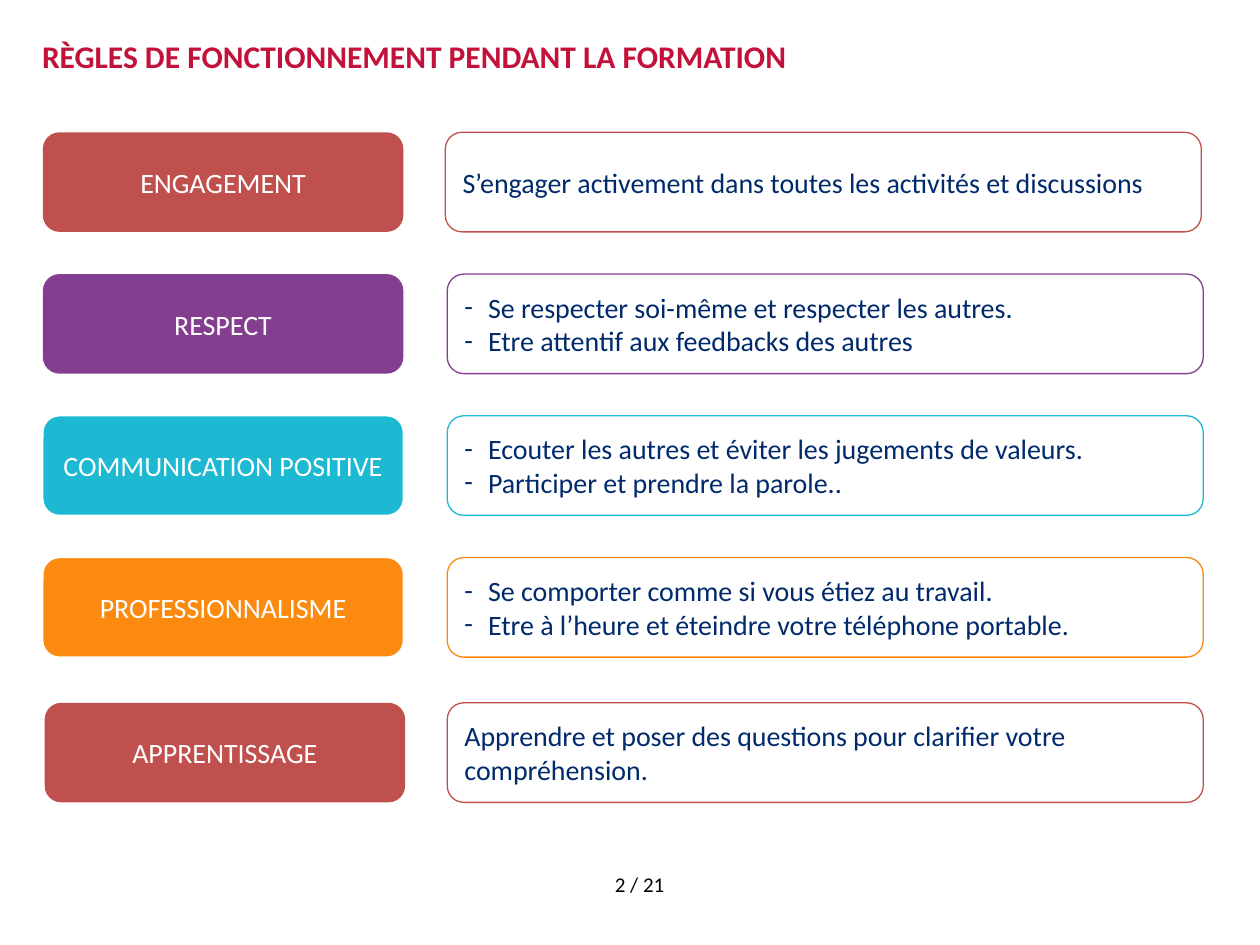
from dataclasses import dataclass
from typing import Optional

from lxml import etree
from pptx import Presentation
from pptx.dml.color import RGBColor
from pptx.enum import shapes, text
from pptx.oxml import ns
from pptx.util import Pt

FONT = "Calibri"
WHITE, NAVY, CRIMSON, BLACK = "FFFFFF", "002A6C", "C2113A", "000000"
RED, PURPLE, TURQUOISE, ORANGE = "C0504D", "833E90", "1DB8D1", "FC8A0E"
CARD_HEIGHT, LABEL_WIDTH, DETAIL_WIDTH = 56.9, 206, 432
HANGING = 13.5


@dataclass
class Rule:
    label: str
    details: list[str]
    colour: str
    top: float
    label_left: float = 24.5
    detail_left: float = 255.6
    label_outline: Optional[str] = None


RULES = [
    Rule("ENGAGEMENT",
         ["S’engager activement dans toutes les activités et discussions"],
         RED, 75.6, detail_left=254.5),
    Rule("RESPECT",
         ["Se respecter soi-même et respecter les autres.",
          "Etre attentif aux feedbacks des autres"],
         PURPLE, 156.6),
    Rule("COMMUNICATION POSITIVE",
         ["Ecouter les autres et éviter les jugements de valeurs.",
          "Participer et prendre la parole.."],
         TURQUOISE, 237.6, label_outline=WHITE),
    Rule("PROFESSIONNALISME",
         ["Se comporter comme si vous étiez au travail.",
          "Etre à l’heure et éteindre votre téléphone portable."],
         ORANGE, 318.6, label_outline=WHITE),
    Rule("APPRENTISSAGE",
         ["Apprendre et poser des questions pour clarifier votre compréhension."],
         RED, 401.6, label_left=25.5),
]


def rgb(colour: str) -> RGBColor:
    return RGBColor.from_string(colour)


def add_dash(paragraph) -> None:
    """Give the paragraph a hanging dash bullet in the text colour."""
    properties = paragraph._p.get_or_add_pPr()
    properties.set("marL", str(Pt(HANGING)))
    properties.set("indent", str(-Pt(HANGING)))
    bullet_colour = etree.SubElement(properties, ns.qn("a:buClr"))
    etree.SubElement(bullet_colour, ns.qn("a:srgbClr"), val=NAVY)
    etree.SubElement(properties, ns.qn("a:buFont"), typeface=FONT)
    etree.SubElement(properties, ns.qn("a:buChar"), char="-")


def write(frame, lines: list[str], size: float, colour: str,
          align=text.PP_ALIGN.LEFT, bold: bool = False) -> None:
    """Write one paragraph per line, with dashes when there are several."""
    frame.word_wrap = True
    for index, line in enumerate(lines):
        paragraph = frame.add_paragraph() if index else frame.paragraphs[0]
        paragraph.alignment = align
        if len(lines) > 1:
            add_dash(paragraph)
        run = paragraph.add_run()
        run.text = line
        run.font.name = FONT
        run.font.size = Pt(size)
        run.font.bold = bold
        run.font.color.rgb = rgb(colour)


def add_card(slide, left: float, top: float, width: float,
             fill: Optional[str], outline: Optional[str]):
    card = slide.shapes.add_shape(
        shapes.MSO_SHAPE.ROUNDED_RECTANGLE,
        Pt(left), Pt(top), Pt(width), Pt(CARD_HEIGHT))
    card.shadow.inherit = False
    if fill:
        card.fill.solid()
        card.fill.fore_color.rgb = rgb(fill)
    else:
        card.fill.background()
    if outline:
        card.line.color.rgb = rgb(outline)
        card.line.width = Pt(0.75)
    else:
        card.line.fill.background()
    card.text_frame.vertical_anchor = text.MSO_ANCHOR.MIDDLE
    return card.text_frame


def add_rule(slide, rule: Rule) -> None:
    label = add_card(slide, rule.label_left, rule.top, LABEL_WIDTH,
                     rule.colour, rule.label_outline)
    write(label, [rule.label], 16, WHITE, text.PP_ALIGN.CENTER)
    details = add_card(slide, rule.detail_left, rule.top, DETAIL_WIDTH,
                       None, rule.colour)
    write(details, rule.details, 16, NAVY)


def main() -> None:
    deck = Presentation()
    deck.slide_width, deck.slide_height = Pt(720), Pt(540)
    slide = deck.slides.add_slide(deck.slide_layouts[6])

    title = slide.shapes.add_textbox(Pt(24), Pt(21), Pt(672), Pt(54.5)).text_frame
    title.margin_left = title.margin_top = title.margin_right = title.margin_bottom = 0
    write(title, ["RÈGLES DE FONCTIONNEMENT PENDANT LA FORMATION"], 18, CRIMSON,
          bold=True)

    for rule in RULES:
        add_rule(slide, rule)

    page = slide.shapes.add_textbox(Pt(315.5), Pt(494.5), Pt(100), Pt(22)).text_frame
    write(page, ["2 / 21"], 12, BLACK, text.PP_ALIGN.CENTER)

    deck.save("out.pptx")


if __name__ == "__main__":
    main()
